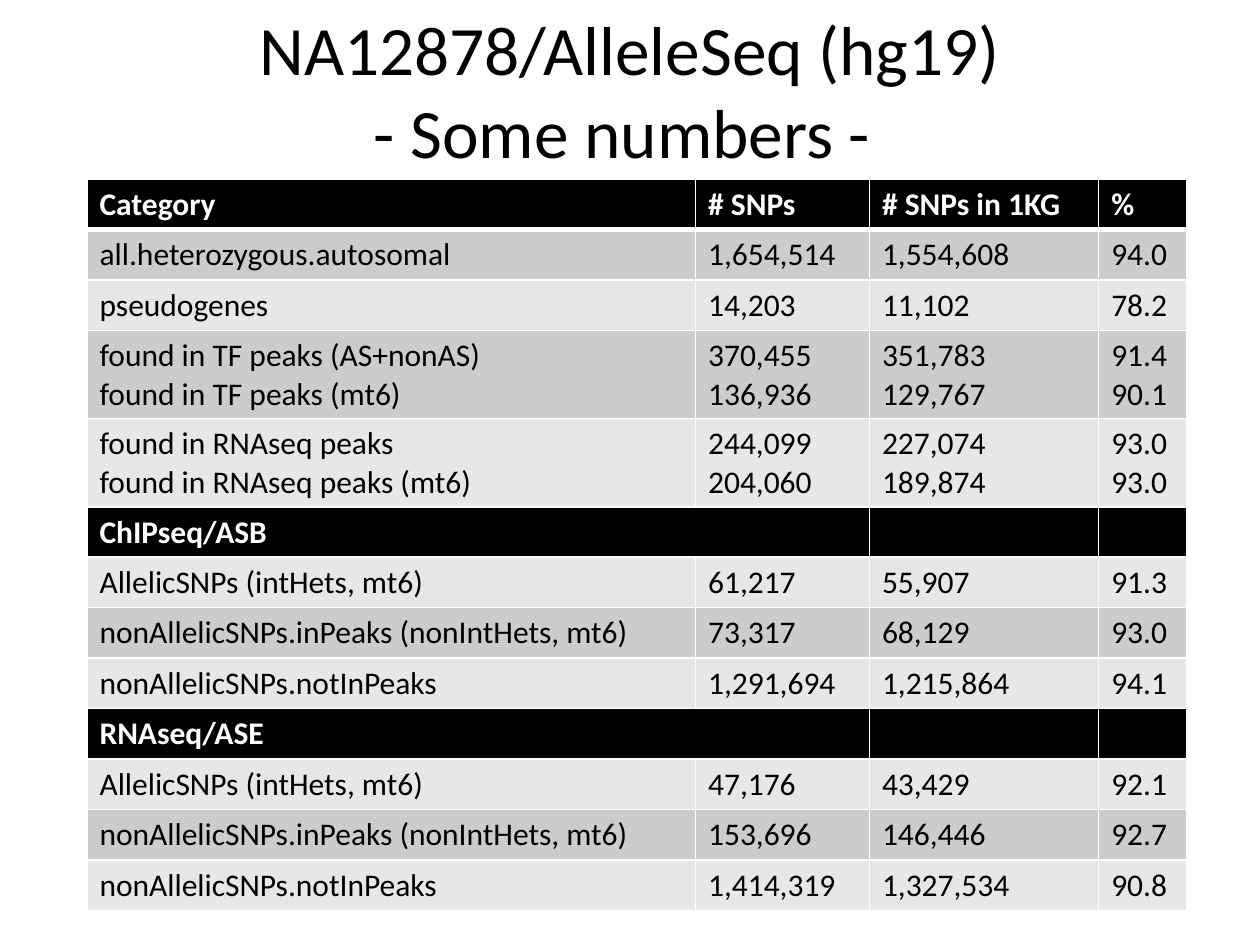
"""Build the slide of SNP counts for NA12878."""
from lxml.etree import SubElement
from pptx import Presentation
from pptx.dml.color import RGBColor
from pptx.enum.text import MSO_ANCHOR as Anchor, PP_ALIGN as Align
from pptx.oxml.ns import qn
from pptx.util import Inches, Pt

BLACK = RGBColor(0x00, 0x00, 0x00)
WHITE = RGBColor(0xFF, 0xFF, 0xFF)
DARK_BAND = RGBColor(0xCC, 0xCC, 0xCC)
LIGHT_BAND = RGBColor(0xE7, 0xE7, 0xE7)

TITLE = ("NA12878/AlleleSeq (hg19)", "- Some numbers - ")
COLUMN_WIDTHS = (4.83, 1.38, 1.82, 0.7)
LINE_HEIGHT, CELL_PADDING = 0.29, 0.1
HEADER = ("Category", "# SNPs", "# SNPs in 1KG", "%")
ALLELIC = "AllelicSNPs (intHets, mt6)"
IN_PEAKS = "nonAllelicSNPs.inPeaks (nonIntHets, mt6)"
NOT_IN_PEAKS = "nonAllelicSNPs.notInPeaks"
COUNTS = (
    HEADER,
    ("all.heterozygous.autosomal", "1,654,514", "1,554,608", "94.0"),
    ("pseudogenes", "14,203", "11,102", "78.2"),
    ("found in TF peaks (AS+nonAS)\nfound in TF peaks (mt6)",
     "370,455\n136,936", "351,783\n129,767", "91.4\n90.1"),
    ("found in RNAseq peaks\nfound in RNAseq peaks (mt6)",
     "244,099\n204,060", "227,074\n189,874", "93.0\n93.0"),
    ("ChIPseq/ASB",),
    (ALLELIC, "61,217", "55,907", "91.3"),
    (IN_PEAKS, "73,317", "68,129", "93.0"),
    (NOT_IN_PEAKS, "1,291,694", "1,215,864", "94.1"),
    ("RNAseq/ASE",),
    (ALLELIC, "47,176", "43,429", "92.1"),
    (IN_PEAKS, "153,696", "146,446", "92.7"),
    (NOT_IN_PEAKS, "1,414,319", "1,327,534", "90.8"),
)


class SlideWriter:
    """Hold the text style and the current slide."""

    def __init__(self, slide, font="Calibri", title_size=39.6, table_size=18):
        self.slide = slide
        self.font = font
        self.title_size = title_size
        self.table_size = table_size

    def run(self, paragraph, text, size, color, bold=False):
        run = paragraph.add_run()
        run.text = text
        run.font.name = self.font
        run.font.size = Pt(size)
        run.font.bold = bold
        run.font.color.rgb = color

    def title(self, lines, left, top, width, height):
        box = self.slide.shapes.add_textbox(
            Inches(left), Inches(top), Inches(width), Inches(height))
        frame = box.text_frame
        frame.word_wrap = True
        frame.vertical_anchor = Anchor.MIDDLE
        heading = frame.paragraphs[0]
        heading.alignment = Align.CENTER
        for index, line in enumerate(lines):
            if index:
                heading.add_line_break()
            self.run(heading, line, self.title_size, BLACK)

    def border(self, cell, side, points):
        line = SubElement(cell._tc.get_or_add_tcPr(), qn(f"a:ln{side}"), w=str(Pt(points)))
        fill = SubElement(line, qn("a:solidFill"))
        SubElement(fill, qn("a:srgbClr"), val=str(WHITE))

    def cell(self, cell, text, fill, color, bold, top, bottom):
        for side, points in (("L", 1), ("R", 1), ("T", top), ("B", bottom)):
            self.border(cell, side, points)
        cell.fill.solid()
        cell.fill.fore_color.rgb = fill
        frame = cell.text_frame
        for index, line in enumerate(text.split("\n")):
            paragraph = frame.add_paragraph() if index else frame.paragraphs[0]
            paragraph.font.size = Pt(self.table_size)
            if line:
                self.run(paragraph, line, self.table_size, color, bold)

    def table(self, rows, widths, left, top):
        heights = [CELL_PADDING + LINE_HEIGHT * (row[0].count("\n") + 1) for row in rows]
        table = self.slide.shapes.add_table(
            len(rows), len(widths), Inches(left), Inches(top),
            Inches(sum(widths)), Inches(sum(heights))).table
        for column, width in zip(table.columns, widths):
            column.width = Inches(width)
        for number, (row, height) in enumerate(zip(rows, heights)):
            table.rows[number].height = Inches(height)
            section = len(row) == 1
            dark = section or number == 0
            band = DARK_BAND if number % 2 else LIGHT_BAND
            texts = row + ("",) * (len(widths) - len(row))
            for column, text in enumerate(texts):
                self.cell(table.cell(number, column), text,
                          BLACK if dark else band, WHITE if dark else BLACK, dark,
                          top=3 if number == 1 else 1, bottom=3 if number == 0 else 1)
            if section:
                table.cell(number, 0).merge(table.cell(number, 1))


def main():
    deck = Presentation()
    deck.slide_width, deck.slide_height = Inches(10), Inches(7.5)
    writer = SlideWriter(deck.slides.add_slide(deck.slide_layouts[6]))
    writer.title(TITLE, 0.5, 0.08, 9, 1.25)
    writer.table(COUNTS, COLUMN_WIDTHS, 0.69, 1.42)
    deck.save("out.pptx")


if __name__ == "__main__":
    main()
